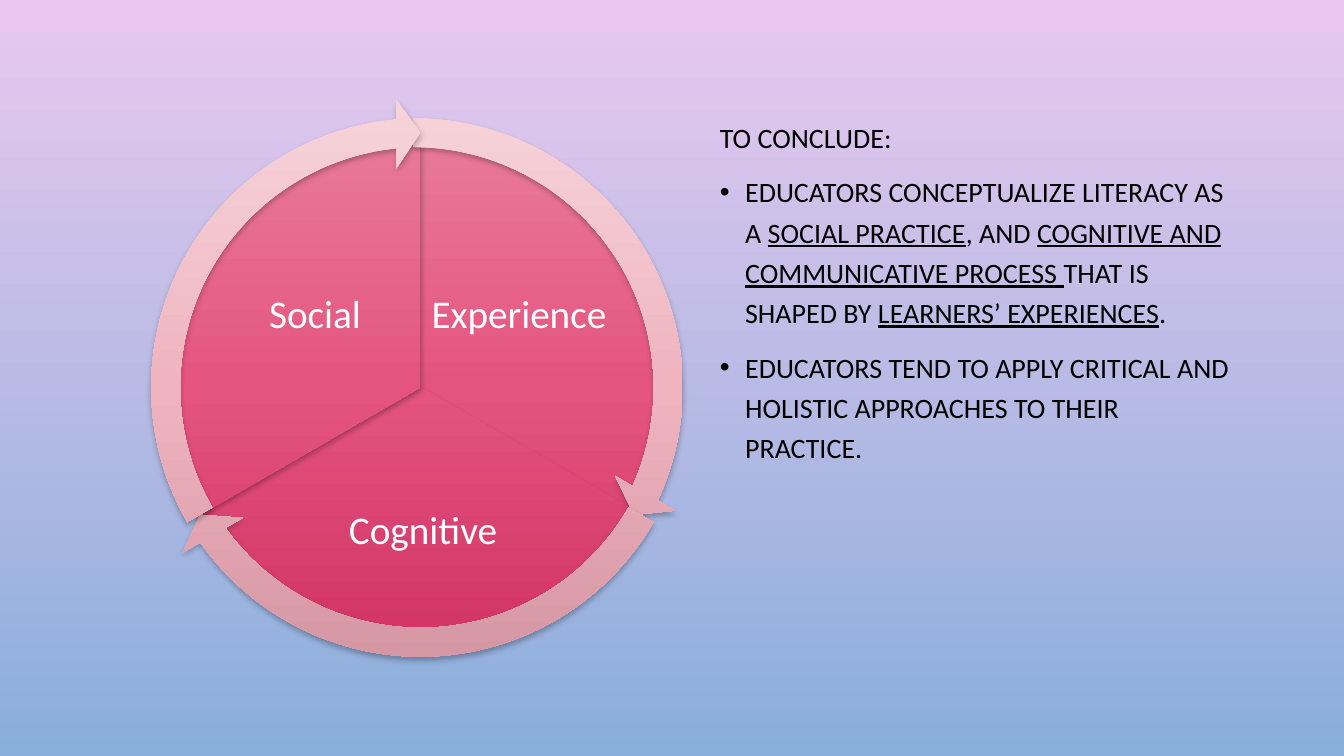
from copy import deepcopy

from lxml.etree import SubElement
from pptx import Presentation
from pptx.dml.color import RGBColor
from pptx.enum.shapes import MSO_SHAPE
from pptx.enum.text import MSO_ANCHOR, PP_ALIGN
from pptx.oxml.ns import qn
from pptx.util import Pt

PX = 914400 / 100.8
FONT = "Calibri"
COLORS = {
    "sky": ["E9C8EF", "89AEDB"],
    "slice": ["E97B99", "E4547F", "D23465"],
    "arrow": ["F6D4DA", "EFB4C0", "D495A2"],
    "text": "000000",
    "label": "FFFFFF",
    "shadow": "000000",
}


def px(length):
    return round(length * PX)


def add_run(paragraph, text, size=20, color="text", underline=None):
    run = paragraph.add_run()
    run.text = text
    run.font.name = FONT
    run.font.size = Pt(size)
    run.font.color.rgb = RGBColor.from_string(COLORS[color])
    run.font.underline = underline


def color_stops(fill, hexes):
    fill.gradient_angle = 270
    for i, (stop, color) in enumerate(zip(fill.gradient_stops, hexes)):
        stop.position = i / (len(hexes) - 1)
        stop.color.rgb = RGBColor.from_string(color)


class Slide:
    def __init__(self, deck):
        self.slide = deck.slides.add_slide(deck.slide_layouts[6])
        fill = self.slide.background.fill
        fill.gradient()
        color_stops(fill, COLORS["sky"])

    def ring_part(self, kind, box, adjustments, colors):
        """Preset shape with a three-stop gradient and a soft shadow."""
        part = self.slide.shapes.add_shape(kind, *map(px, box))
        for i, value in enumerate(adjustments):
            part.adjustments[i] = value
        part.line.fill.background()
        part.fill.gradient()
        properties = part._element.spPr
        stops = properties.find(".//" + qn("a:gsLst"))
        stops.insert(1, deepcopy(stops[0]))
        color_stops(part.fill, COLORS[colors])
        part.shadow.inherit = False
        shadow = SubElement(properties.find(qn("a:effectLst")), qn("a:outerShdw"),
                            blurRad=str(Pt(4)), dist=str(Pt(2)), dir="5400000",
                            algn="ctr", rotWithShape="0")
        color = SubElement(shadow, qn("a:srgbClr"), val=COLORS["shadow"])
        SubElement(color, qn("a:alpha"), val="28000")

    def text_frame(self, box):
        frame = self.slide.shapes.add_textbox(*map(px, box)).text_frame
        frame.word_wrap = True
        return frame

    def label(self, text, box):
        frame = self.text_frame(box)
        frame.vertical_anchor = MSO_ANCHOR.MIDDLE
        frame.margin_left = frame.margin_right = px(4)
        frame.margin_top = frame.margin_bottom = px(4)
        paragraph = frame.paragraphs[0]
        paragraph.alignment = PP_ALIGN.CENTER
        paragraph.line_spacing = 0.9
        add_run(paragraph, text, size=28, color="label")

    def conclusion(self, heading, bullets, box):
        frame = self.text_frame(box)
        frame.paragraphs[0].line_spacing = 1.2
        add_run(frame.paragraphs[0], heading)
        for runs in bullets:
            paragraph = frame.add_paragraph()
            paragraph.line_spacing = 1.2
            paragraph.space_before = Pt(10)
            properties = paragraph._p.get_or_add_pPr()
            properties.set("marL", "228600")
            properties.set("indent", "-228600")
            bullet_color = SubElement(properties, qn("a:buClr"))
            SubElement(bullet_color, qn("a:srgbClr"), val=COLORS["text"])
            SubElement(properties, qn("a:buFont"), typeface="Arial")
            SubElement(properties, qn("a:buChar"), char="•")
            # Every second run is underlined
            for i, text in enumerate(runs):
                add_run(paragraph, text, underline=i % 2 == 1)


def main():
    deck = Presentation()
    deck.slide_width, deck.slide_height = px(1344), px(756)
    slide = Slide(deck)

    # Conclusion text
    slide.conclusion("TO CONCLUDE:", [
        ["EDUCATORS CONCEPTUALIZE LITERACY AS A ", "SOCIAL PRACTICE", ", AND ",
         "COGNITIVE AND COMMUNICATIVE PROCESS ", "THAT IS SHAPED BY ",
         "LEARNERS’ EXPERIENCES", "."],
        ["EDUCATORS TEND TO APPLY CRITICAL AND HOLISTIC APPROACHES TO THEIR PRACTICE."],
    ], (710, 109, 542, 537))

    # Pie slices with their labels
    slices = [
        ("Experience", (156, 131, 515, 512), (162, 18), (427, 240, 184, 152)),
        ("Cognitive", (163, 130, 515, 515), (18, 90), (285, 464, 276, 135)),
        ("Social", (163, 130, 515, 515), (90, 162), (223, 239, 184, 153)),
    ]
    for name, pie_box, angles, label_box in slices:
        slide.ring_part(MSO_SHAPE.PIE, pie_box, angles, "slice")
        slide.label(name, label_box)

    # Arrows around the pie
    for left, end, start in [(124, 14.73, 161.99), (131, 86.72, 18), (131, 158.73, 90)]:
        slide.ring_part(MSO_SHAPE.CIRCULAR_ARROW, (left, 98, 579, 579),
                        (0.05, 3.28, end, start, 0.06), "arrow")

    deck.save("out.pptx")


if __name__ == "__main__":
    main()
